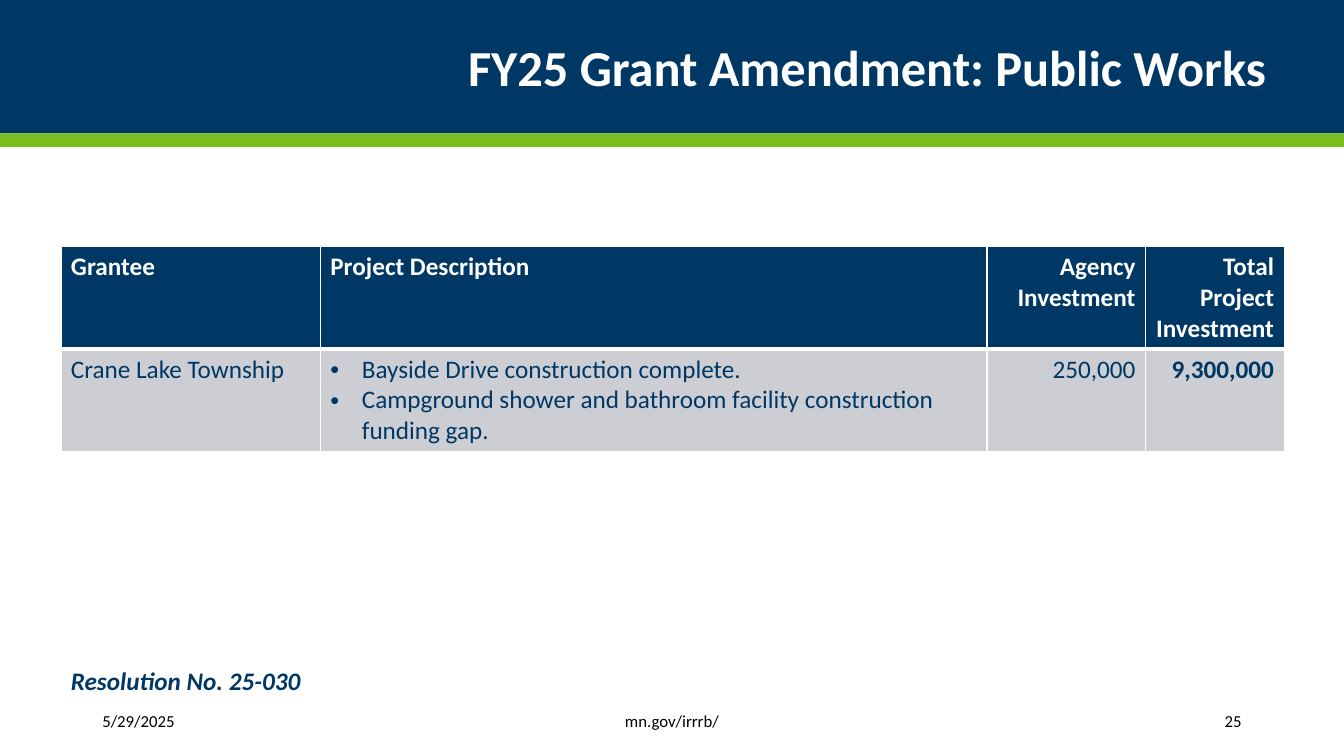
from dataclasses import dataclass

from pptx import Presentation
from pptx.dml.color import RGBColor
from pptx.enum.shapes import MSO_SHAPE
from pptx.enum.text import MSO_ANCHOR, MSO_AUTO_SIZE, PP_ALIGN
from pptx.oxml import parse_xml
from pptx.oxml.ns import nsdecls
from pptx.util import Pt

PX = 9525  # EMU per px, 96 px to the inch
RECT = MSO_SHAPE.RECTANGLE
TOP, MIDDLE = MSO_ANCHOR.TOP, MSO_ANCHOR.MIDDLE
LEFT, CENTER, RIGHT = PP_ALIGN.LEFT, PP_ALIGN.CENTER, PP_ALIGN.RIGHT
NO_AUTOFIT = MSO_AUTO_SIZE.NONE
W, H = 1280, 720


@dataclass(frozen=True)
class Theme:
    font: str = "Calibri"
    navy: str = "003865"
    green: str = "78BE21"
    gray: str = "CCCED3"
    white: str = "FFFFFF"
    black: str = "000000"
    title: int = 36
    body: int = 18
    small: int = 12


THEME = Theme()

HEADINGS = ["Grantee", "Project Description", "Agency Investment",
            "Total Project Investment"]
GRANTS = [
    ["Crane Lake Township",
     ["Bayside Drive construction complete.",
      "Campground shower and bathroom facility construction funding gap."],
     "250,000", "9,300,000"],
]
COLUMN_WIDTHS = [247, 635, 151, 132]
COLUMN_ALIGN = [LEFT, LEFT, RIGHT, RIGHT]
ROW_HEIGHT = 97
BULLET_INDENT = 30


def emu(*lengths):
    return [length * PX for length in lengths]


def write(p, text, size, color, align=LEFT, **font):
    p.alignment = align
    r = p.add_run()
    r.text = text
    r.font.color.rgb = RGBColor.from_string(color)
    for name, value in {"name": THEME.font, "size": Pt(size), **font}.items():
        setattr(r.font, name, value)


def add_text(s, box, text, size, color, align=LEFT, anchor=TOP, **font):
    tf = s.shapes.add_textbox(*emu(*box)).text_frame
    tf.word_wrap = True
    tf.vertical_anchor = anchor
    write(tf.paragraphs[0], text, size, color, align, **font)


def add_band(s, box, color):
    sp = s.shapes.add_shape(RECT, *emu(*box))
    sp.shadow.inherit = False
    sp.fill.solid()
    sp.fill.fore_color.rgb = RGBColor.from_string(color)
    sp.line.fill.background()


def add_header(s, box, text):
    x, y, w, h = box
    rule = 13
    add_band(s, (x, y, w, h - rule), THEME.navy)
    add_band(s, (x, y + h - rule, w, rule), THEME.green)

    # Title, raised above the bands
    title = s.shapes.title
    s.shapes._spTree.append(title._element)
    place = emu(x + 112, y + 19, w - 176, 96)
    for name, value in zip(("left", "top", "width", "height"), place):
        setattr(title, name, value)
    tf = title.text_frame
    for name, value in {"word_wrap": True, "auto_size": NO_AUTOFIT,
                        "vertical_anchor": MIDDLE}.items():
        setattr(tf, name, value)
    p = tf.paragraphs[0]
    p.line_spacing = 0.9
    write(p, text, THEME.title, THEME.white, RIGHT, bold=True)


def add_bullet(p):
    pPr = p._p.get_or_add_pPr()
    pPr.set("marL", str(BULLET_INDENT * PX))
    pPr.set("indent", str(-BULLET_INDENT * PX))
    for xml in ('<a:buFont {} typeface="Arial"/>', '<a:buChar {} char="•"/>'):
        pPr.append(parse_xml(xml.format(nsdecls("a"))))


def format_cell(cell, color, bottom_border):
    widths = {"L": 1, "R": 1, "T": 1, "B": bottom_border}
    for side, width in widths.items():
        cell._tc.get_or_add_tcPr().append(parse_xml(
            f'<a:ln{side} {nsdecls("a")} w="{Pt(width)}"><a:solidFill>'
            f'<a:srgbClr val="{THEME.white}"/></a:solidFill></a:ln{side}>'))
    cell.fill.solid()
    cell.fill.fore_color.rgb = RGBColor.from_string(color)


def add_grants(s, x, y):
    rows = [HEADINGS] + GRANTS
    table = s.shapes.add_table(
        len(rows), len(HEADINGS),
        *emu(x, y, sum(COLUMN_WIDTHS), ROW_HEIGHT * len(rows))).table
    for column, width in zip(table.columns, COLUMN_WIDTHS):
        column.width = width * PX
    for i, row in enumerate(rows):
        heading = i == 0
        fill, color = ((THEME.navy, THEME.white) if heading
                       else (THEME.gray, THEME.navy))
        table.rows[i].height = ROW_HEIGHT * PX
        for j, content in enumerate(row):
            cell = table.cell(i, j)
            format_cell(cell, fill, 3 if heading else 1)
            bold = heading or j == len(row) - 1
            bulleted = isinstance(content, list)
            tf = cell.text_frame
            for k, text in enumerate(content if bulleted else [content]):
                p = tf.add_paragraph() if k else tf.paragraphs[0]
                write(p, text, THEME.body, color, COLUMN_ALIGN[j], bold=bold)
                if bulleted:
                    add_bullet(p)


def add_footer(s, box, date, address, number):
    x, y, w, h = box
    parts = [(0, 143, date, LEFT),
             (259, 586, address, CENTER),
             (w - 153, 153, number, RIGHT)]
    for offset, width, text, align in parts:
        add_text(s, (x + offset, y, width, h), text, THEME.small,
                 THEME.black, align, MIDDLE)


def main():
    prs = Presentation()
    prs.slide_width, prs.slide_height = emu(W, H)
    s = prs.slides.add_slide(prs.slide_layouts[5])
    add_header(s, (0, 0, W, 140), "FY25 Grant Amendment: Public Works")
    add_grants(s, 58, 235)
    add_text(s, (58, 629, 717, 38), "Resolution No. 25-030", THEME.body,
             THEME.navy, bold=True, italic=True)
    add_footer(s, (88, 667, 1104, 38), "5/29/2025", "mn.gov/irrrb/", "25")
    prs.save("out.pptx")


if __name__ == "__main__":
    main()
